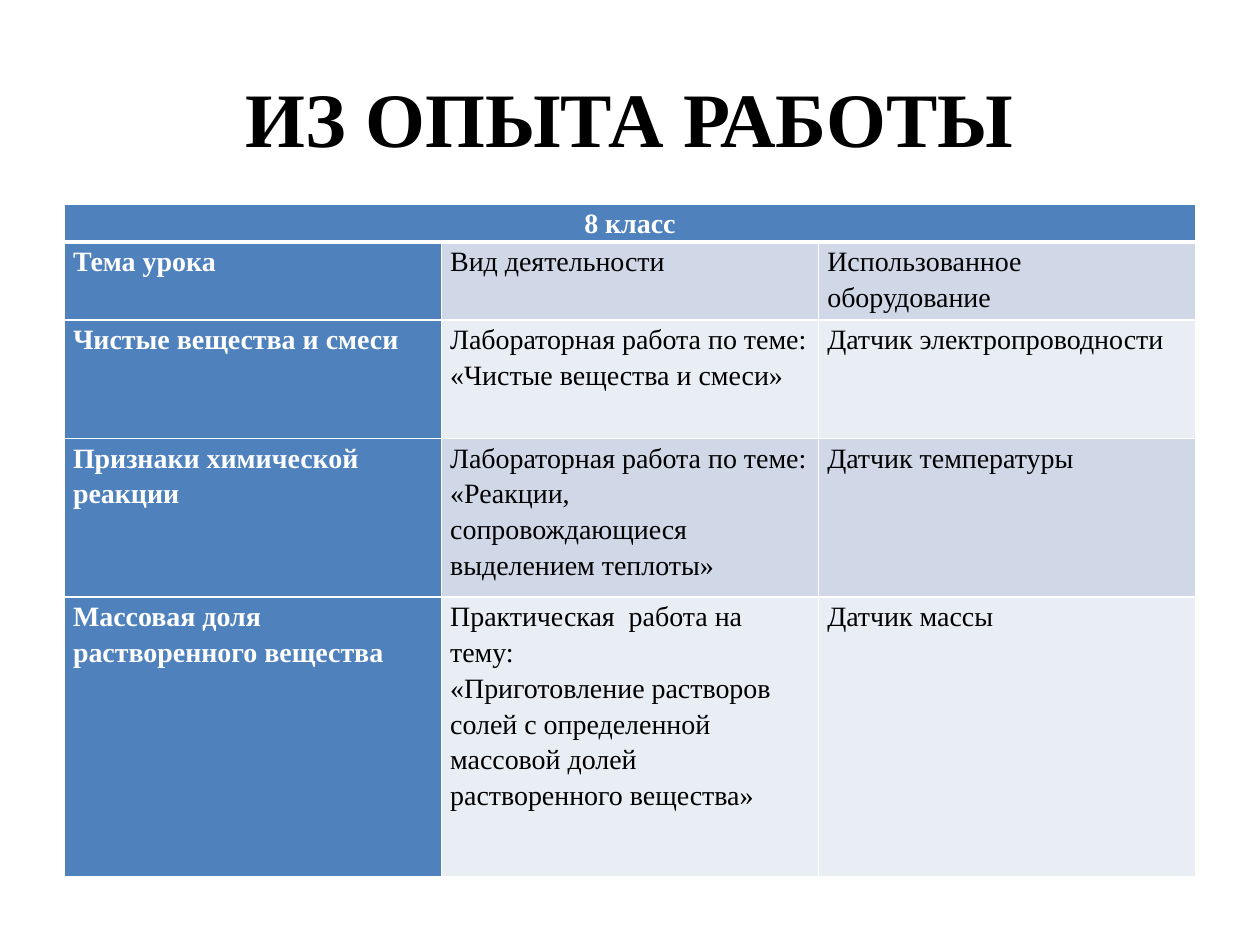
from dataclasses import dataclass

from lxml import etree
from pptx import Presentation, util as u
from pptx.dml.color import RGBColor
from pptx.enum import text
from pptx.oxml import ns


@dataclass(frozen=True)
class Theme:
    """Colours, type and line widths of the slide."""
    font: str = "Times New Roman"
    title_size: int = 44
    cell_size: int = 16
    line_spacing: float = 1.15
    accent: str = "4F81BD"
    bands: tuple = ("E9EDF4", "D0D8E8")
    ink: str = "000000"
    paper: str = "FFFFFF"
    thin: int = 1
    thick: int = 3


THEME = Theme()
TITLE = "ИЗ ОПЫТА РАБОТЫ"
GRADE = "8 класс"
LESSONS = [
    ("Тема урока", "Вид деятельности", "Использованное оборудование"),
    ("Чистые вещества и смеси",
     "Лабораторная работа по теме: «Чистые вещества и смеси»",
     "Датчик электропроводности"),
    ("Признаки химической реакции",
     "Лабораторная работа по теме: «Реакции, сопровождающиеся выделением теплоты»",
     "Датчик температуры"),
    ("Массовая доля растворенного вещества",
     "Практическая  работа на тему:\n«Приготовление растворов солей с определенной "
     "массовой долей растворенного вещества»",
     "Датчик массы"),
]
ROW_HEIGHTS = (0.3, 0.62, 0.94, 1.26, 2.22)
TABLE_LEFT, TABLE_TOP, TABLE_WIDTH = 0.51, 1.62, 8.98


def format_text(frame, size, color, bold, align):
    """Apply one style to every paragraph and run of a text frame."""
    for para in frame.paragraphs:
        para.alignment = align
        for span in para.runs:
            span.font.name = THEME.font
            span.font.size = u.Pt(size)
            span.font.bold = bold
            span.font.color.rgb = RGBColor.from_string(color)


def add_title(page, wording):
    """Fill the title placeholder."""
    frame = page.shapes.title.text_frame
    frame.text = wording
    frame.vertical_anchor = text.MSO_ANCHOR.MIDDLE
    format_text(frame, THEME.title_size, THEME.ink, True, text.PP_ALIGN.CENTER)


def set_borders(cell, top, bottom):
    """Draw white lines on the four sides of a cell."""
    properties = cell._tc.get_or_add_tcPr()
    sides = {"lnL": THEME.thin, "lnR": THEME.thin, "lnT": top, "lnB": bottom}
    for side, width in sides.items():
        line = etree.SubElement(properties, ns.qn(f"a:{side}"), w=str(u.Pt(width)))
        fill = etree.SubElement(line, ns.qn("a:solidFill"))
        etree.SubElement(fill, ns.qn("a:srgbClr"), val=THEME.paper)


def style_cell(cell, row, column):
    """Style a cell by its place in the table."""
    heading = row == 0 or column == 0
    set_borders(cell, THEME.thick if row == 1 else THEME.thin,
                THEME.thick if row == 0 else THEME.thin)
    cell.fill.solid()
    cell.fill.fore_color.rgb = RGBColor.from_string(
        THEME.accent if heading else THEME.bands[row % 2])
    cell.margin_left = cell.margin_right = u.Inches(0.07)
    cell.margin_top = cell.margin_bottom = 0
    for para in cell.text_frame.paragraphs:
        para.line_spacing = THEME.line_spacing
    format_text(cell.text_frame, THEME.cell_size, THEME.paper if heading else THEME.ink,
                heading, text.PP_ALIGN.CENTER if row == 0 else text.PP_ALIGN.LEFT)


def add_lesson_table(page, grade, lessons):
    """Add the lessons under a heading that spans all columns."""
    rows = [(grade, "", ""), *lessons]
    columns = len(rows[0])
    table = page.shapes.add_table(
        len(rows), columns, u.Inches(TABLE_LEFT), u.Inches(TABLE_TOP),
        u.Inches(TABLE_WIDTH), u.Inches(sum(ROW_HEIGHTS))).table
    for row, (wordings, height) in enumerate(zip(rows, ROW_HEIGHTS)):
        table.rows[row].height = u.Inches(height)
        for column, wording in enumerate(wordings):
            cell = table.cell(row, column)
            cell.text_frame.text = wording
            style_cell(cell, row, column)
    table.cell(0, 0).merge(table.cell(0, columns - 1))


def main():
    """Build and save the slide."""
    deck = Presentation()
    deck.slide_width, deck.slide_height = u.Inches(10), u.Inches(7.5)
    page = deck.slides.add_slide(deck.slide_layouts.get_by_name("Title Only"))
    add_title(page, TITLE)
    add_lesson_table(page, GRADE, LESSONS)
    deck.save("out.pptx")


if __name__ == "__main__":
    main()
